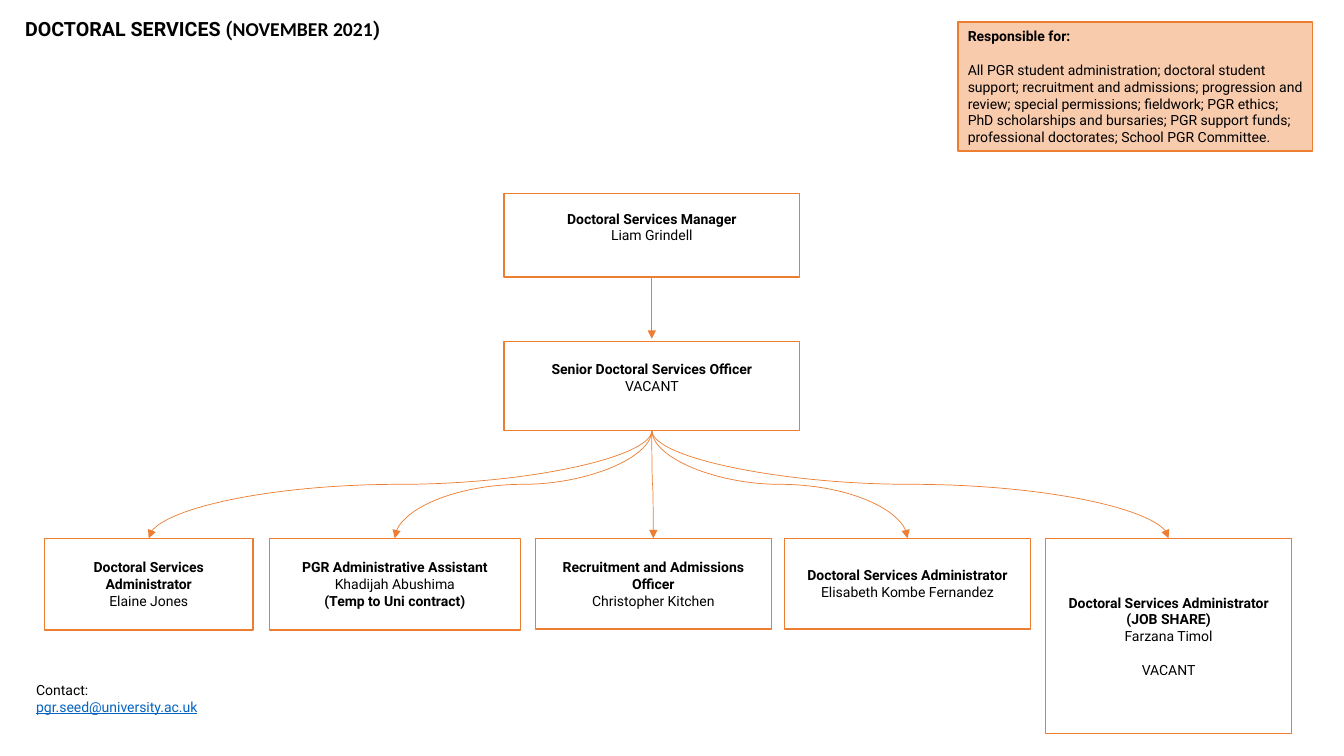
from dataclasses import dataclass

from lxml import etree
from pptx import Presentation
from pptx import util as u
from pptx.dml.color import RGBColor
from pptx.enum import shapes, text
from pptx.oxml.ns import qn


@dataclass(frozen=True)
class Theme:
    accent: str = "ED7D31"
    panel: str = "F8CBAD"
    ink: str = "000000"
    link: str = "0563C1"
    font: str = "Roboto"
    date_font: str = "Calibri"
    body: int = 10
    title: int = 14
    line: int = 12  # height of one body line, in points
    border: float = 1
    arrow: float = 0.5


def rgb(value):
    return RGBColor.from_string(value)


class Chart:
    def __init__(self, slide, theme):
        self.s, self.t = slide, theme

    def run(self, p, words, bold=False, size=None, font=None, color=None, underline=None):
        r = p.add_run()
        r.text = words
        f = r.font
        f.name, f.size = font or self.t.font, u.Pt(size or self.t.body)
        f.bold, f.underline = bold, underline
        f.color.rgb = rgb(color or self.t.ink)

    def box(self, at, lines, fill=None, align=text.PP_ALIGN.CENTER, gap_at=None, lift=0):
        """Lines are (words, bold); gap_at takes a line's space before it, lift raises the text."""
        sp = self.s.shapes.add_shape(shapes.MSO_SHAPE.RECTANGLE, *map(u.Inches, at))
        sp.shadow.inherit = False
        if fill:
            sp.fill.solid()
            sp.fill.fore_color.rgb = rgb(fill)
        else:
            sp.fill.background()
        sp.line.color.rgb, sp.line.width = rgb(self.t.accent), u.Pt(self.t.border)
        tf = sp.text_frame
        tf.word_wrap, tf.vertical_anchor = True, text.MSO_ANCHOR.MIDDLE
        tf.margin_bottom = u.Inches(0.05) + u.Pt(lift)
        for i, (words, bold) in enumerate(lines):
            p = tf.add_paragraph() if i else tf.paragraphs[0]
            p.alignment = align
            if i == gap_at:
                p.space_before = u.Pt(self.t.line)
            self.run(p, words, bold)
        return sp

    def label(self, at, paragraphs):
        """Each paragraph is a list of (words, run style)."""
        tf = self.s.shapes.add_textbox(*map(u.Inches, at)).text_frame
        tf.word_wrap = True
        for i, runs in enumerate(paragraphs):
            p = tf.add_paragraph() if i else tf.paragraphs[0]
            for words, style in runs:
                self.run(p, words, **style)

    def arrow(self, kind, x1, y1, x2, y2):
        c = self.s.shapes.add_connector(kind, x1, y1, x2, y2)
        c.line.color.rgb, c.line.width = rgb(self.t.accent), u.Pt(self.t.arrow)
        etree.SubElement(c.line._get_or_add_ln(), qn("a:tailEnd"), type="triangle")
        etree.SubElement(c._element.spPr, qn("a:effectLst"))
        return c

    def curve(self, parent, child):
        """S-curve from bottom centre to top centre, turned a quarter to leave downwards."""
        x1, y1 = parent.left + parent.width // 2, parent.top + parent.height
        x2, y2 = child.left + child.width // 2, child.top
        drop, reach = y2 - y1, abs(x2 - x1)
        left, top = (x1 + x2 - drop) // 2, (y1 + y2 - reach) // 2
        start, end = left, left + drop
        rightward = x2 > x1
        if rightward:
            start, end = end, start
        c = self.arrow(shapes.MSO_CONNECTOR.CURVE, start, top, end, top + reach)
        c._element.spPr.find(qn("a:xfrm")).set("rot", str((270 if rightward else 90) * 60000))


def main():
    prs = Presentation()
    prs.slide_width, prs.slide_height = u.Inches(13.33), u.Inches(7.5)
    t = Theme()
    chart = Chart(prs.slides.add_slide(prs.slide_layouts[6]), t)

    # Title
    heading = dict(bold=True, size=t.title)
    chart.label((0.15, 0.12, 9.79, 0.5), [[
        ("DOCTORAL SERVICES (", heading),
        ("NOVEMBER 2021", dict(heading, font=t.date_font)),
        (")", heading)]])

    # Responsibilities
    chart.box((9.5, 0.22, 3.52, 1.28), [
        ("Responsible for:", True),
        ("All PGR student administration; doctoral student support; recruitment and "
         "admissions; progression and review; special permissions; fieldwork; PGR ethics; "
         "PhD scholarships and bursaries; PGR support funds; professional doctorates; "
         "School PGR Committee.", False)],
        fill=t.panel, align=text.PP_ALIGN.LEFT, gap_at=1)

    # Management
    manager = chart.box((5, 1.92, 2.93, 0.83), [
        ("Doctoral Services Manager", True), ("Liam Grindell", False)], lift=t.line)
    officer = chart.box((5, 3.39, 2.93, 0.88), [
        ("Senior Doctoral Services Officer", True), ("VACANT", False)], lift=t.line)
    middle = manager.left + manager.width // 2
    c = chart.arrow(shapes.MSO_CONNECTOR.STRAIGHT, middle, manager.top + manager.height,
                    middle, u.Inches(3.36))
    c.begin_connect(manager, 2)

    # Team: left, width, height, lines, line with a gap before it
    team = [
        (0.44, 2.07, 0.91, [("Doctoral Services Administrator", True),
                            ("Elaine Jones", False)], None),
        (2.67, 2.49, 0.91, [("PGR Administrative Assistant", True),
                            ("Khadijah Abushima", False),
                            ("(Temp to Uni contract)", True)], None),
        (5.31, 2.34, 0.9, [("Recruitment and Admissions Officer", True),
                           ("Christopher Kitchen", False)], None),
        (7.78, 2.44, 0.9, [("Doctoral Services Administrator", True),
                           ("Elisabeth Kombe Fernandez", False)], None),
        (10.37, 2.44, 1.94, [("Doctoral Services Administrator", True),
                             ("(JOB SHARE)", True),
                             ("Farzana Timol", False),
                             ("VACANT", False)], 3),
    ]
    for left, width, height, lines, gap_at in team:
        member = chart.box((left, 5.34, width, height), lines, gap_at=gap_at)
        chart.curve(officer, member)

    # Contact
    chart.label((0.26, 6.71, 4.59, 0.44), [
        [("Contact:", {})],
        [("pgr.seed@university.ac.uk", dict(color=t.link, underline=True))]])

    prs.save("out.pptx")


if __name__ == "__main__":
    main()
